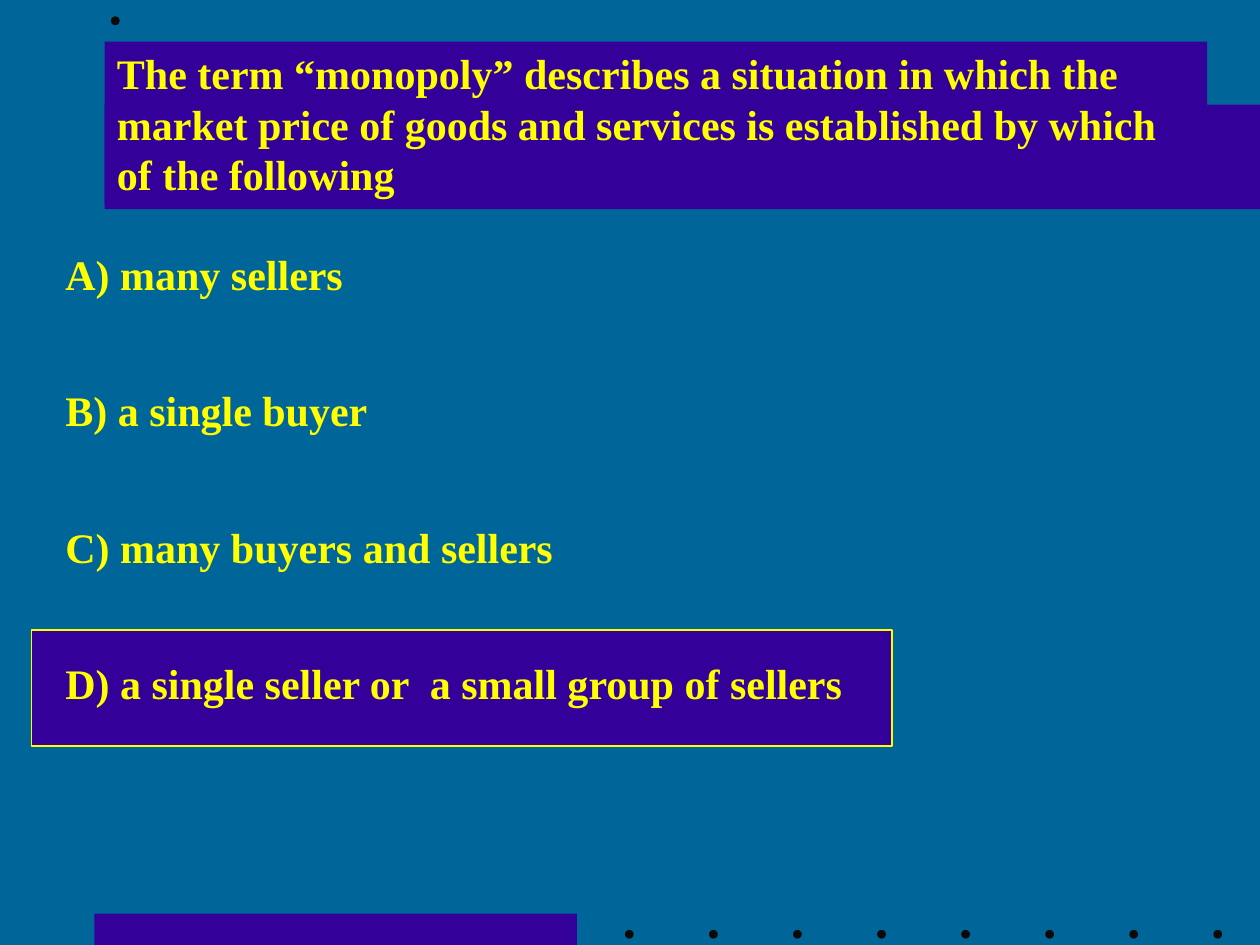
from dataclasses import dataclass

from pptx import Presentation
from pptx import util as u
from pptx.dml.color import RGBColor
from pptx.enum import shapes, text

Inches = u.Inches


@dataclass(frozen=True)
class Theme:
    background: RGBColor = RGBColor(0x00, 0x66, 0x99)
    panel: RGBColor = RGBColor(0x33, 0x00, 0x99)
    accent: RGBColor = RGBColor(0xFF, 0xFF, 0x00)
    dot: RGBColor = RGBColor(0x0A, 0x0A, 0x0A)
    font: str = "Times New Roman"
    size: u.Pt = u.Pt(24)


THEME = Theme()
QUESTION = ("The term “monopoly” describes a situation in which the market price "
            "of goods and services is established by which of the following")
ANSWERS = [
    "A) many sellers",
    "B) a single buyer",
    "C) many buyers and sellers",
    "D) a single seller or  a small group of sellers",
]
DOT_SIZE = Inches(0.07)


def add_filled(slide, kind, box, color, outline=None):
    shape = slide.shapes.add_shape(kind, *box)
    shape.shadow.inherit = False
    shape.fill.solid()
    shape.fill.fore_color.rgb = color
    if outline is None:
        shape.line.fill.background()
    else:
        shape.line.color.rgb = outline
        shape.line.width = u.Pt(1)
    return shape


def add_panel(slide, box, outline=None):
    return add_filled(slide, shapes.MSO_SHAPE.RECTANGLE, box, THEME.panel, outline)


def add_dot(slide, left, top):
    add_filled(slide, shapes.MSO_SHAPE.OVAL, (left, top, DOT_SIZE, DOT_SIZE), THEME.dot)


def write(shape, words):
    frame = shape.text_frame
    frame.word_wrap = True
    frame.auto_size = text.MSO_AUTO_SIZE.SHAPE_TO_FIT_TEXT
    frame.vertical_anchor = text.MSO_ANCHOR.TOP
    paragraph = frame.paragraphs[0]
    paragraph.text = words
    paragraph.alignment = text.PP_ALIGN.LEFT
    paragraph.font.name = THEME.font
    paragraph.font.size = THEME.size
    paragraph.font.bold = True
    paragraph.font.color.rgb = THEME.accent


def add_footer(slide, left, top, width, height):
    """Bar on the left, then a row of evenly spaced dots."""
    add_panel(slide, (left, top, Inches(3.83), height))
    dot_count = 8
    first = left + Inches(4.21)
    step = (left + width - DOT_SIZE - first) / (dot_count - 1)
    for index in range(dot_count):
        add_dot(slide, int(first + index * step), top + Inches(0.13))


def add_header(slide, left, top, width, height):
    """Band reaching the slide's edge, with one dot above it."""
    band_height = Inches(0.83)
    add_panel(slide, (left, top + height - band_height, width, band_height))
    add_dot(slide, left + Inches(0.05), top)


def add_question(slide, left, top, width, height):
    write(add_panel(slide, (left, top, width, height)), QUESTION)


def add_answers(slide, left, top, width, height):
    """Answers at equal steps; the last, correct one is framed."""
    row_height = Inches(0.5)
    step = (height - row_height) / (len(ANSWERS) - 1)
    last_top = top + height - row_height
    add_panel(slide, (left - Inches(0.17), last_top - Inches(0.17),
                      Inches(6.83), Inches(0.92)), THEME.accent)
    for index, answer in enumerate(ANSWERS):
        box = slide.shapes.add_textbox(left, int(top + index * step), width, row_height)
        write(box, answer)


def main():
    presentation = Presentation()
    presentation.slide_width = Inches(10)
    presentation.slide_height = Inches(7.5)
    slide = presentation.slides.add_slide(presentation.slide_layouts[6])
    slide.background.fill.solid()
    slide.background.fill.fore_color.rgb = THEME.background

    # Decoration
    add_footer(slide, Inches(0.75), Inches(7.25), Inches(8.95), Inches(0.25))
    add_header(slide, Inches(0.83), Inches(0.13), Inches(9.17), Inches(1.53))

    # Question and answers
    add_question(slide, Inches(0.83), Inches(0.33), Inches(8.75), Inches(1.3))
    add_answers(slide, Inches(0.42), Inches(1.92), Inches(9.17), Inches(3.75))

    presentation.save("out.pptx")


if __name__ == "__main__":
    main()
